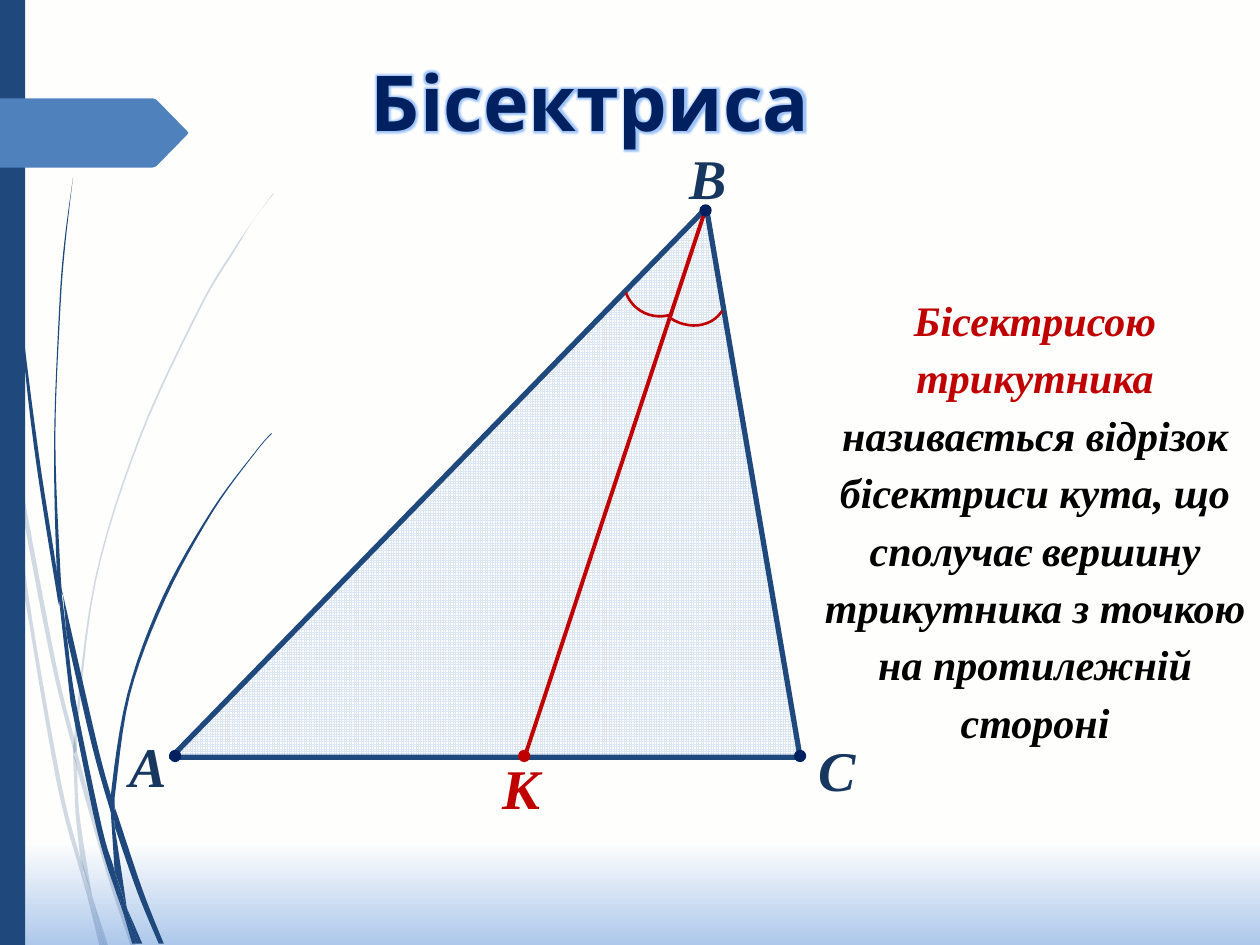
from dataclasses import dataclass

from lxml import etree
from pptx import Presentation
from pptx.dml.color import RGBColor
from pptx.enum.dml import MSO_PATTERN
from pptx.enum.shapes import MSO_CONNECTOR, MSO_SHAPE
from pptx.enum.text import MSO_AUTO_SIZE, PP_ALIGN
from pptx.oxml.ns import qn
from pptx.util import Emu, Inches, Pt

RECT, TRIANGLE = MSO_SHAPE.RECTANGLE, MSO_SHAPE.ISOSCELES_TRIANGLE
ARC, DOT = MSO_SHAPE.ARC, MSO_SHAPE.FLOWCHART_CONNECTOR
STRAIGHT, SMALL_GRID = MSO_CONNECTOR.STRAIGHT, MSO_PATTERN.SMALL_GRID
CENTER, GROW = PP_ALIGN.CENTER, MSO_AUTO_SIZE.SHAPE_TO_FIT_TEXT
COLS, ROWS, CELL = 100, 75, Inches(0.1)
DOT_SIZE = 0.8


@dataclass(frozen=True)
class Theme:
    page: str = "FEFEFD"
    page_end: str = "ADC8EB"
    main: str = "1F497D"
    accent: str = "4F81BD"
    title: str = "002060"
    title_line: str = "254061"
    glow: str = "9DC3F7"
    label: str = "17375E"
    red: str = "C00000"
    black: str = "000000"
    grid: str = "DCE6F2"
    white: str = "FFFFFF"
    heading_font: str = "Quicksand"
    body_font: str = "Times New Roman"
    heading_size: int = 44
    label_size: int = 32
    body_size: int = 24


# Each blade is (edge going down, edge going back up), in grid cells.
PALE_BLADES = [
    ([(0, 28.2), (.6, 32.2), (.8, 35)], [(.7, 34.4), (0, 29.9)]),
    ([(1, 34.5), (4.3, 52), (5.9, 58.6)], [(5.9, 59.9), (4, 52.2), (1.2, 37.6)]),
    ([(6.1, 59.6), (6.4, 60.7), (8.8, 69.2), (10.8, 75.1)],
     [(10.4, 75.1), (8.5, 69.4), (6.1, 61)]),
    ([(7.3, 71.1), (8.6, 75.1)], [(8.3, 75.1)]),
    ([(.8, 35), (1.2, 37.6), (2.2, 46.9), (4.8, 61.9), (6.4, 68.3), (7, 71.4)],
     [(6.4, 69.3), (4.5, 62.1), (1.9, 47)]),
    ([(5.8, 59.9), (6.1, 60.8), (6.3, 64.6), (7.3, 71.1)],
     [(6.7, 69.2), (6.4, 68.3), (6, 64.6)]),
    ([(21.7, 15.3), (20.1, 17.5), (18.6, 19.7), (15.8, 24.4), (11, 34.8),
      (7.5, 46.1), (5.9, 58.4), (6.1, 59.6)],
     [(6.1, 58.4), (7.6, 46.2), (11.1, 34.9), (15.9, 24.5), (18.7, 19.8),
      (20.1, 17.5), (21.7, 15.4)]),
    ([(7, 71.4), (8.2, 75.1)], [(7.9, 75.1)]),
    ([(5.9, 58.6), (6.1, 59.6), (6.1, 61)], [(6.1, 60.8), (5.8, 59.9)]),
    ([(6.5, 68.3), (7.3, 71.1), (8.3, 75.1)], [(8.2, 75.1), (7, 71.4)]),
]
DARK_BLADES = [
    ([(.3, 0), (.4, 4.8), (.6, 10.9), (1.5, 23.2), (3, 35.5), (4.5, 45.3), (4.7, 48.1)],
     [(4.6, 47.7), (2.7, 35.5), (1.4, 23.3), (.5, 11), (.3, 4.8), (.2, 0)]),
    ([(5, 47.2), (7.7, 59), (8.8, 63.1)], [(8.8, 64.5), (7.3, 59.2), (5.3, 50.5)]),
    ([(9.1, 64.1), (9.4, 64.9), (11.3, 70.6), (13, 74.9)],
     [(12.6, 74.9), (10.9, 70.8), (9.1, 65.6)]),
    ([(4.7, 47.7), (5.3, 50.5), (6, 55.6), (8.1, 65.7), (9.1, 69.1), (9.7, 72.2)],
     [(9.2, 70.8), (7.7, 65.9), (5.6, 55.7)]),
    ([(5.8, 14.1), (5.1, 19.3), (4.7, 24.5), (4.3, 34.9), (4.5, 44.9), (4.9, 47.2)],
     [(5, 47.2), (4.8, 45.3), (4.4, 34.9), (4.8, 24.5), (5.2, 19.3), (5.8, 14.1)]),
    ([(10, 71.9), (11.3, 74.9)], [(11, 74.9)]),
    ([(4.5, 44.9), (4.9, 47.2), (5.3, 50.5)], [(4.7, 47.7), (4.5, 45.3)]),
    ([(21.5, 34.4), (20.3, 35.8), (16.8, 40.5), (12.9, 47.4), (10.1, 55.1),
      (8.8, 63.1), (9.1, 64.1)],
     [(9.1, 63.3), (10.3, 55.2), (13.1, 47.6), (16.9, 40.6), (20.3, 35.9), (21.6, 34.4)]),
    ([(9.7, 72.2), (10.8, 74.9)], [(10.5, 74.9)]),
    ([(8.8, 64.5), (9.1, 65.6), (10, 71.6), (10, 71.9)], [(9.6, 70.6), (9.1, 69.1)]),
    ([(8.8, 63.1), (9.1, 64.1), (9.1, 65.6)], [(9, 65.1), (8.8, 64.5)]),
    ([(9.1, 69.1), (10, 71.9), (11, 74.9)], [(10.8, 74.9), (9.7, 72.2)]),
]
RIBBON = [(0, 7.8), (12.1, 7.8), (12.4, 7.9), (14.85, 10.4), (14.95, 10.55),
          (14.85, 10.7), (12.4, 13.2), (12.1, 13.3), (0, 13.3)]


def rgb(color):
    return RGBColor.from_string(color)


def cells(*values):
    return [Emu(round(v * CELL)) for v in values]


def smooth(knots, steps=6):
    """Points of a Catmull-Rom curve through the knots."""
    ends = [knots[0], *knots, knots[-1]]
    points = [knots[0]]
    for a, b, c, d in zip(ends, ends[1:], ends[2:], ends[3:]):
        for t in (i / steps for i in range(1, steps + 1)):
            points.append(tuple(
                q + t * (r - p) / 2 + t * t * (2 * p - 5 * q + 4 * r - v) / 2
                + t ** 3 * (3 * q - p - 3 * r + v) / 2
                for p, q, r, v in zip(a, b, c, d)))
    return points


def child(parent, tag, **attrs):
    return etree.SubElement(parent, qn(tag), attrs)


class Board:
    def __init__(self, prs, theme):
        self.theme = theme
        self.s = prs.slides.add_slide(prs.slide_layouts[6])

    def background(self):
        fill = self.s.background.fill
        fill.gradient()
        fill.gradient_angle = 270
        stops = ((0.89, self.theme.page), (1, self.theme.page_end))
        for stop, (position, color) in zip(fill.gradient_stops, stops):
            stop.position, stop.color.rgb = position, rgb(color)

    def paint(self, sp, fill=None, line=None, width=1):
        sp.shadow.inherit = False
        if fill:
            sp.fill.solid()
            sp.fill.fore_color.rgb = rgb(fill)
        else:
            sp.fill.background()
        if line:
            sp.line.color.rgb, sp.line.width = rgb(line), Pt(width)
        else:
            sp.line.fill.background()
        return sp

    def shape(self, kind, box, adjust=(), rotation=0, **style):
        sp = self.s.shapes.add_shape(kind, *cells(*box))
        sp.rotation = rotation
        for i, value in enumerate(adjust):
            sp.adjustments[i] = value
        return self.paint(sp, **style)

    def outline(self, points, fill, shapes=None, opacity=100):
        first, *rest = [cells(*point) for point in points]
        builder = (shapes or self.s.shapes).build_freeform(*first)
        builder.add_line_segments(rest, close=True)
        sp = self.paint(builder.convert_to_shape(), fill)
        if opacity < 100:
            color = sp.fill._xPr.find(".//" + qn("a:srgbClr"))
            child(color, "a:alpha", val=str(opacity * 1000))

    def grass(self, blades, opacity=100):
        group = self.s.shapes.add_group_shape()
        for down, up in blades:
            self.outline(smooth(down) + smooth(up), self.theme.main, group.shapes, opacity)

    def line(self, start, end, color, width):
        cx = self.s.shapes.add_connector(STRAIGHT, *cells(*start, *end))
        cx.line.color.rgb, cx.line.width = rgb(color), Pt(width)
        child(cx._element.spPr, "a:effectLst")

    def text(self, box, runs, size, font, wrap=True, inset=None, **paragraph):
        """Add a text box; runs are (text, color) pairs."""
        tf = self.s.shapes.add_textbox(*cells(*box)).text_frame
        tf.word_wrap, tf.auto_size = wrap, GROW
        if inset is not None:
            for side in ("left", "top", "right", "bottom"):
                setattr(tf, f"margin_{side}", inset)
        p = tf.paragraphs[0]
        for name, value in paragraph.items():
            setattr(p, name, value)
        look = dict(size=Pt(size), name=font, bold=True, italic=font == self.theme.body_font)
        for words, color in runs:
            r = p.add_run()
            r.text = words
            r.font.color.rgb = rgb(color)
            for name, value in look.items():
                setattr(r.font, name, value)
        return p

    def title(self, box, words):
        t = self.theme
        p = self.text(box, [(words, t.title)], t.heading_size, t.heading_font, alignment=CENTER)
        props = p.runs[0].font._element
        ln = etree.Element(qn("a:ln"), w=str(Pt(0.75)))
        child(child(ln, "a:solidFill"), "a:srgbClr", val=t.title_line)
        props.insert(0, ln)
        effects = etree.Element(qn("a:effectLst"))
        glow = child(effects, "a:glow", rad=str(Pt(4)))
        child(glow, "a:srgbClr", val=t.glow)
        props.find(qn("a:solidFill")).addnext(effects)

    def label(self, x, y, letter, color):
        self.text((x, y, 3, 5.4), [(letter, color)], self.theme.label_size,
                  self.theme.body_font, wrap=False, inset=0)

    def dot(self, x, y, color):
        box = (x - DOT_SIZE / 2, y - DOT_SIZE / 2, DOT_SIZE, DOT_SIZE)
        self.shape(DOT, box, fill=color, line=color, width=1.25)


def main():
    prs = Presentation()
    prs.slide_width, prs.slide_height = cells(COLS, ROWS)
    t = Theme()
    board = Board(prs, t)
    board.background()
    board.grass(PALE_BLADES, opacity=20)
    board.grass(DARK_BLADES)
    board.shape(RECT, (0, 0, 2, ROWS), fill=t.main)
    board.outline(RIBBON, t.accent)
    board.title((17.6, 3.8, 58.5, 8.4), "Бісектриса")

    triangle = board.shape(TRIANGLE, (13.6, 16.5, 49.9, 43.6), [0.851], line=t.main, width=3)
    triangle.fill.patterned()
    triangle.fill.pattern = SMALL_GRID
    triangle.fill.fore_color.rgb, triangle.fill.back_color.rgb = rgb(t.grid), rgb(t.white)
    for x, y, letter in ((10.3, 58.1, "А"), (54.7, 11.4, "В"), (65, 58.4, "С")):
        board.label(x, y, letter, t.label)

    board.line((56, 16.6), (41.7, 59.9), t.red, 2.25)
    board.shape(ARC, (49.5, 19.4, 5.8, 5.7), rotation=160.5, line=t.red, width=1.5)
    board.shape(ARC, (52, 19.9, 5.4, 6.2), [161.06, 0], 124.4, line=t.red, width=1.5)
    board.label(39.9, 59.8, "К", t.red)
    board.text((63.5, 22.3, 37.3, 37.8), [
        ("Бісектрисою трикутника ", t.red),
        ("називається відрізок бісектриси кута, що сполучає вершину "
         "трикутника з точкою на протилежній стороні", t.black),
    ], t.body_size, t.body_font, alignment=CENTER, line_spacing=1.14)
    board.dot(41.6, 60, t.red)
    for x, y in ((13.9, 60), (63.5, 60), (56, 16.7)):
        board.dot(x, y, t.title)
    prs.save("out.pptx")


if __name__ == "__main__":
    main()
